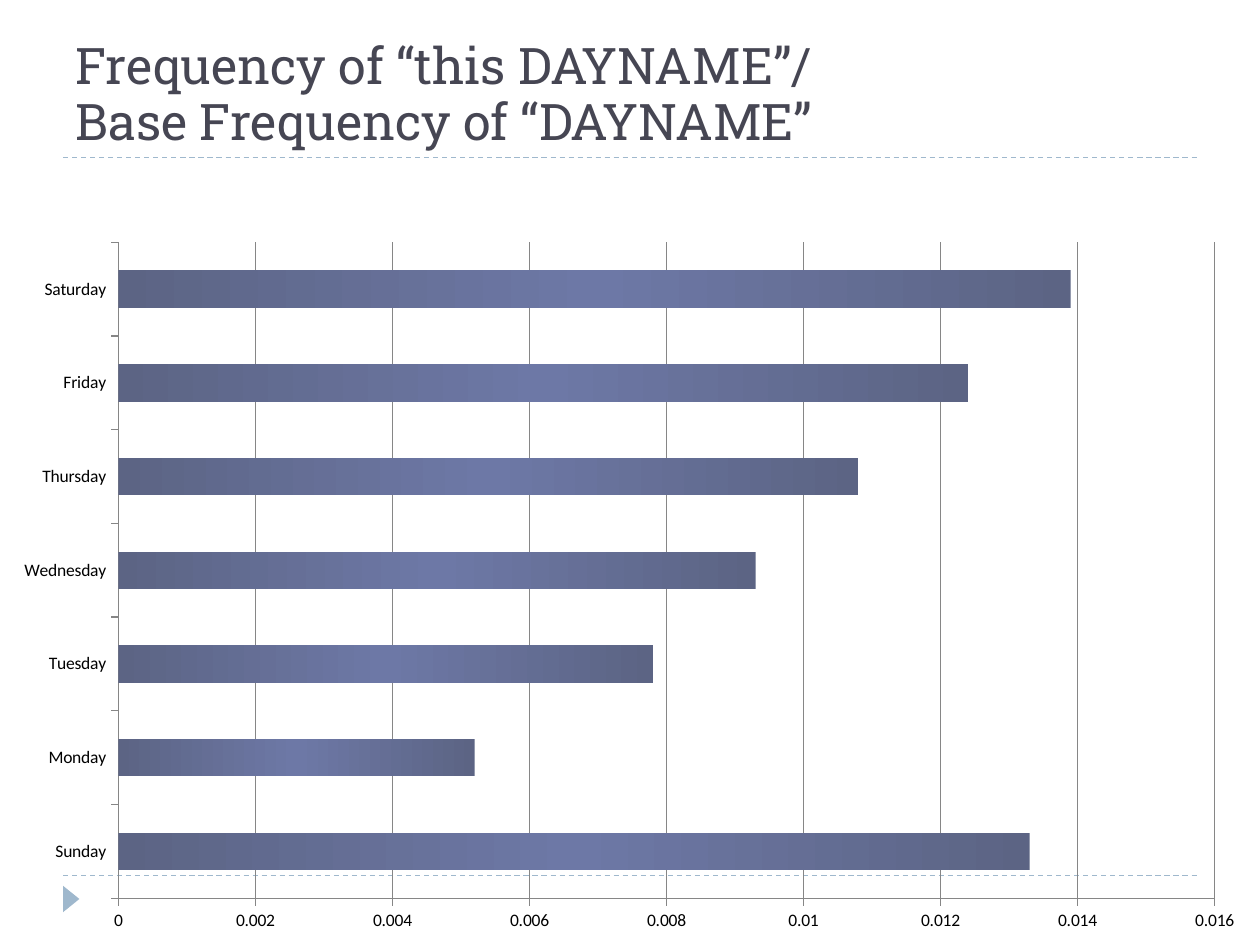
from copy import deepcopy

from lxml import etree
from pptx import Presentation
from pptx.chart.data import CategoryChartData
from pptx.dml.color import RGBColor
from pptx.enum.chart import XL_CHART_TYPE, XL_TICK_MARK
from pptx.enum.dml import MSO_LINE
from pptx.enum.shapes import MSO_CONNECTOR, MSO_SHAPE
from pptx.enum.text import MSO_ANCHOR
from pptx.oxml.ns import qn
from pptx.util import Inches, Pt

COLORS = {"title": "464653", "accent": "9FB8CD", "bar_edge": "5C6484",
          "bar_mid": "6D78A6", "axis": "868686", "label": "000000"}
FREQUENCIES = {"Sunday": 0.0133, "Monday": 0.0052, "Tuesday": 0.0078,
               "Wednesday": 0.0093, "Thursday": 0.0108, "Friday": 0.0124,
               "Saturday": 0.0139}


def rgb(name):
    return RGBColor.from_string(COLORS[name])


prs = Presentation()
prs.slide_width, prs.slide_height = Inches(10), Inches(7.5)
s = prs.slides.add_slide(prs.slide_layouts[6])

# Dashed rules and corner marker
for y in (6.95, 1.25):
    rule = s.shapes.add_connector(MSO_CONNECTOR.STRAIGHT, Inches(0.5), Inches(y),
                                  Inches(9.5), Inches(y))
    rule.line.color.rgb = rgb("accent")
    rule.line.width = Pt(0.75)
    rule.line.dash_style = MSO_LINE.DASH
    etree.SubElement(rule._element.spPr, qn("a:effectLst"))

marker = s.shapes.add_shape(MSO_SHAPE.ISOSCELES_TRIANGLE, Inches(0.46), Inches(7.07),
                            Inches(0.21), Inches(0.13))
marker.rotation = 90
marker.shadow.inherit = False
marker.fill.solid()
marker.fill.fore_color.rgb = rgb("accent")
marker.line.fill.background()

# Title
sp = s.shapes.add_textbox(Inches(0.5), Inches(0.17), Inches(9), Inches(1.08))
tf = sp.text_frame
tf.word_wrap = True
tf.vertical_anchor = MSO_ANCHOR.BOTTOM
p = tf.paragraphs[0]
p.line_spacing = 0.92
for i, text in enumerate(("Frequency of “this DAYNAME”/", "Base Frequency of “DAYNAME”")):
    if i:
        p.add_line_break()
    r = p.add_run()
    r.text = text
    r.font.name = "Roboto Slab"
    r.font.size = Pt(28.8)
    r.font.color.rgb = rgb("title")

# Bar chart
data = CategoryChartData()
data.categories = list(FREQUENCIES)
data.add_series("Series 1", list(FREQUENCIES.values()))
chart = s.shapes.add_chart(XL_CHART_TYPE.BAR_CLUSTERED, Inches(0), Inches(1.81),
                           Inches(10), Inches(5.69), data).chart
chart.has_legend = False
chart.has_title = False
chart.font.name = "Calibri"
chart.font.size = Pt(10)
chart.font.color.rgb = rgb("label")

plot = chart.plots[0]
plot.vary_by_categories = False
plot.gap_width = 150
series = plot.series[0]
fill = series.format.fill
fill.gradient()
fill.gradient_angle = 0
for stop, name, position in zip(fill.gradient_stops, ("bar_edge", "bar_mid"), (0, 0.5)):
    stop.color.rgb = rgb(name)
    stop.position = position
stops = next(series._element.iter(qn("a:gsLst")))
last_stop = deepcopy(stops[0])
last_stop.set("pos", "100000")
stops.append(last_stop)

values = chart.value_axis
values.minimum_scale, values.maximum_scale, values.major_unit = 0, 0.016, 0.002
values.has_major_gridlines = True
values.tick_labels.number_format = "General"
values.tick_labels.number_format_is_linked = False
for axis in (chart.category_axis, values):
    axis.major_tick_mark = XL_TICK_MARK.OUTSIDE
    axis.minor_tick_mark = XL_TICK_MARK.NONE
for line in (chart.category_axis.format.line, values.format.line,
             values.major_gridlines.format.line):
    line.color.rgb = rgb("axis")
    line.width = Pt(0.75)

# Fixed inner plot area, as fractions of the chart
area = chart._chartSpace.chart.plotArea
for old in area.findall(qn("c:layout")):
    area.remove(old)
layout = etree.Element(qn("c:layout"))
area.insert(0, layout)
manual = etree.SubElement(layout, qn("c:manualLayout"))
for tag, value in (("layoutTarget", "inner"), ("xMode", "edge"), ("yMode", "edge"),
                   ("x", "0.094"), ("y", "0.02"), ("w", "0.87"), ("h", "0.915")):
    etree.SubElement(manual, qn(f"c:{tag}")).set("val", value)

prs.save("out.pptx")
